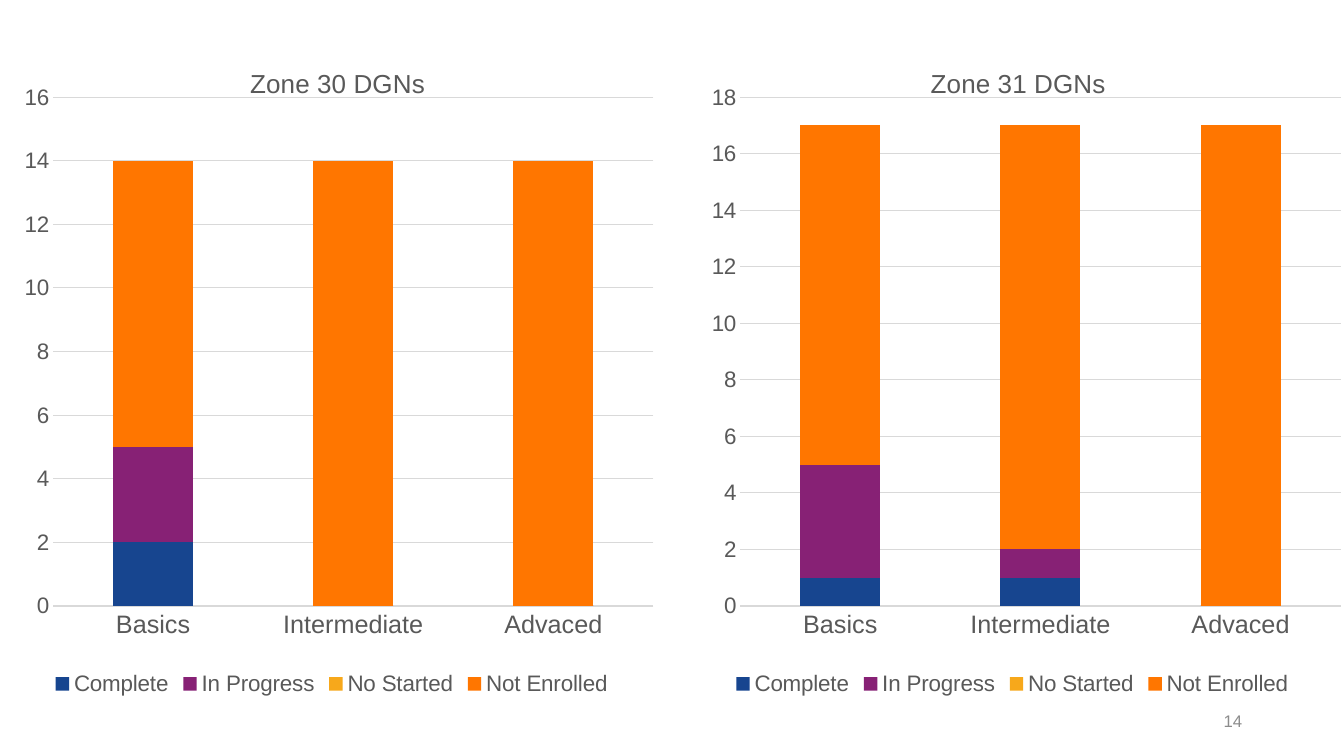
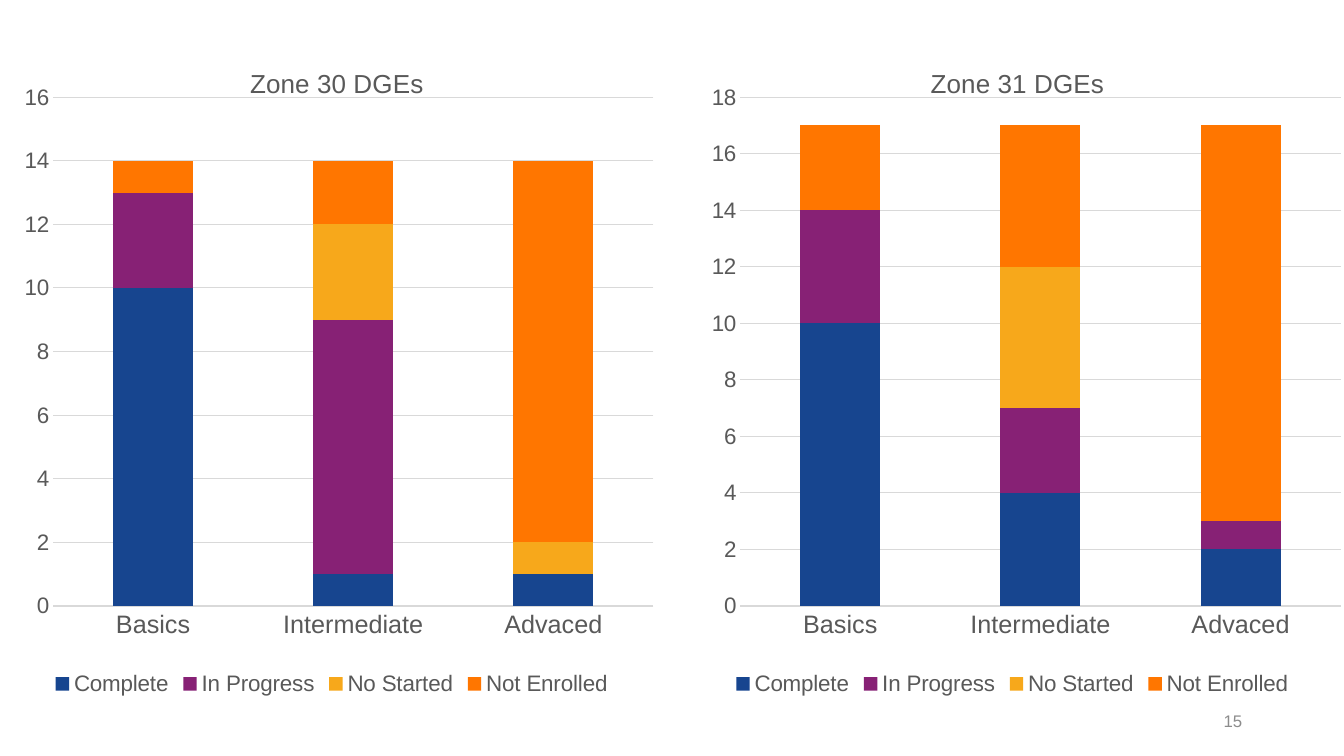
from pptx import Presentation
from pptx.chart.data import CategoryChartData
from pptx.dml.color import RGBColor
from pptx.enum.chart import XL_CHART_TYPE as ChartType
from pptx.enum.chart import XL_LEGEND_POSITION as LegendPosition
from pptx.enum.chart import XL_TICK_MARK as TickMark
from pptx.enum.text import MSO_ANCHOR, PP_ALIGN
from pptx.oxml import parse_xml
from pptx.oxml.ns import nsdecls, qn
from pptx.util import Emu, Pt

FONT = "Arial"
BLACK = RGBColor(0x00, 0x00, 0x00)
TEXT_GREY = RGBColor(0x59, 0x59, 0x59)
PAGE_GREY = RGBColor(0x8C, 0x8C, 0x8C)
GRID_GREY = RGBColor(0xD9, 0xD9, 0xD9)

STATUS_COLORS = {
    "Complete": RGBColor(0x17, 0x45, 0x8F),
    "In Progress": RGBColor(0x87, 0x21, 0x75),
    "No Started": RGBColor(0xF7, 0xA8, 0x1B),
    "Not Enrolled": RGBColor(0xFF, 0x76, 0x00),
}
COURSES = ["Basics", "Intermediate", "Advaced"]

ZONES = [
    {"name": "Zone 30", "left": 0, "plot_x": 0.08, "axis_max": 16},
    {"name": "Zone 31", "left": 675, "plot_x": 0.09, "axis_max": 18},
]
PAGES = [
    (14, "DGNs", [
        [(2, 0, 0), (3, 0, 0), (0, 0, 0), (9, 14, 14)],
        [(1, 1, 0), (4, 1, 0), (0, 0, 0), (12, 15, 17)],
    ]),
    (15, "DGEs", [
        [(10, 1, 1), (3, 8, 0), (0, 3, 1), (1, 2, 12)],
        [(10, 4, 2), (4, 3, 1), (0, 5, 0), (3, 5, 14)],
    ]),
]


def px(length):
    return Emu(length * 9144)


def style_font(font, size, color):
    font.name = FONT
    font.size = Pt(size)
    font.bold = False
    font.color.rgb = color


def style_line(line):
    line.color.rgb = GRID_GREY
    line.width = Pt(0.75)


def set_layout(parent, index, target="", **fractions):
    for old_layout in parent.findall(qn("c:layout")):
        parent.remove(old_layout)
    inner = f'<c:layoutTarget val="{target}"/>' if target else ""
    modes = "".join(f'<c:{key}Mode val="edge"/>' for key in ("x", "y"))
    values = "".join(f'<c:{key} val="{value}"/>' for key, value in fractions.items())
    parent.insert(index, parse_xml(
        f'<c:layout {nsdecls("c")}><c:manualLayout>{inner}{modes}{values}'
        "</c:manualLayout></c:layout>"))


def style_title(chart, text):
    chart.has_title = True
    title = chart.chart_title
    title.include_in_layout = False
    heading = title.text_frame.paragraphs[0]
    heading.text = text
    style_font(heading.runs[0].font, 18.6, TEXT_GREY)
    set_layout(title._element, 1, x=0.37, y=0.04)


def style_axes(chart, axis_max):
    courses, people = chart.category_axis, chart.value_axis
    for axis, size in ((courses, 18), (people, 16)):
        axis.major_tick_mark = axis.minor_tick_mark = TickMark.NONE
        style_font(axis.tick_labels.font, size, TEXT_GREY)
    style_line(courses.format.line)
    people.format.line.fill.background()
    people.minimum_scale, people.maximum_scale = 0, axis_max
    people.major_unit = 2
    style_line(people.major_gridlines.format.line)


def add_progress_chart(slide, zone, group, counts):
    data = CategoryChartData()
    data.categories = COURSES
    for status, values in zip(STATUS_COLORS, counts):
        data.add_series(status, values)
    chart = slide.shapes.add_chart(
        ChartType.COLUMN_STACKED, px(zone["left"]), px(35), px(658), px(660), data).chart
    style_font(chart.font, 10, BLACK)
    style_title(chart, f"{zone['name']} {group}")
    style_axes(chart, zone["axis_max"])

    bars = chart.plots[0]
    bars.vary_by_categories = False
    bars.gap_width, bars.overlap = 150, 100
    for series in bars.series:
        series.format.fill.solid()
        series.format.fill.fore_color.rgb = STATUS_COLORS[series.name]

    chart.has_legend = True
    chart.legend.position = LegendPosition.BOTTOM
    chart.legend.include_in_layout = False
    style_font(chart.legend.font, 16, TEXT_GREY)
    plot_area = chart._chartSpace.chart.plotArea
    set_layout(plot_area, 0, "inner", x=zone["plot_x"], y=0.093, w=0.905, h=0.765)


def add_page_number(slide, number):
    frame = slide.shapes.add_textbox(px(942), px(695), px(300), px(40)).text_frame
    frame.word_wrap = True
    frame.vertical_anchor = MSO_ANCHOR.MIDDLE
    frame.text = str(number)
    paragraph = frame.paragraphs[0]
    paragraph.alignment = PP_ALIGN.RIGHT
    style_font(paragraph.runs[0].font, 12, PAGE_GREY)


def main():
    deck = Presentation()
    deck.slide_width, deck.slide_height = px(1333), px(750)
    for number, group, zone_counts in PAGES:
        slide = deck.slides.add_slide(deck.slide_layouts[6])
        add_page_number(slide, number)
        for zone, counts in zip(ZONES, zone_counts):
            add_progress_chart(slide, zone, group, counts)
    deck.save("out.pptx")


if __name__ == "__main__":
    main()
